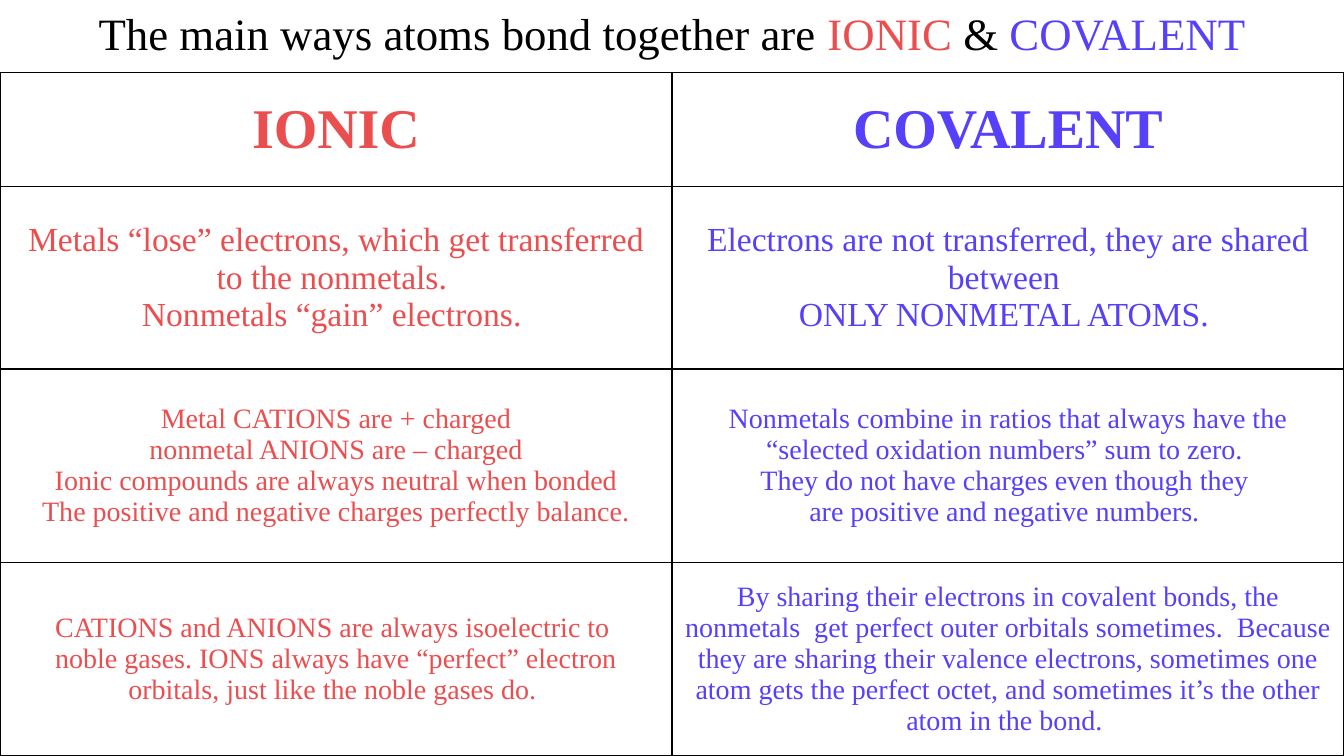
from lxml.etree import SubElement
from pptx import Presentation
from pptx.dml.color import RGBColor
from pptx.enum.text import MSO_ANCHOR, MSO_AUTO_SIZE, PP_ALIGN
from pptx.oxml.ns import qn
from pptx.util import Inches, Pt

BLACK, RED, VIOLET = "000000", "EB4E4F", "5640FA"
SLIDE_WIDTH, SLIDE_HEIGHT = 13.33, 7.5
TABLE_TOP = 0.72

TITLE = [
    ("The main ways atoms bond together are ", BLACK),
    ("IONIC", RED),
    (" & ", BLACK),
    ("COVALENT", VIOLET),
]
COLUMN_COLORS = [RED, VIOLET]

# Row height, text format, ionic text, covalent text
# (\n starts a paragraph, \v breaks a line)
ROWS = [
    (1.13, {"size": Pt(40), "bold": True}, "IONIC", "COVALENT"),
    (1.81, {"size": Pt(24), "bold": False},
     "Metals “lose” electrons, which get transferred\vto the nonmetals. \n"
     "Nonmetals “gain” electrons. ",
     "Electrons are not transferred, they are shared between \v"
     "ONLY NONMETAL ATOMS. "),
    (1.92, {"size": Pt(20), "bold": False},
     "Metal CATIONS are + charged\n"
     "nonmetal ANIONS are – charged\v"
     "Ionic compounds are always neutral when bonded\v"
     "The positive and negative charges perfectly balance.",
     "Nonmetals combine in ratios that always have the "
     "“selected oxidation numbers” sum to zero. \v"
     "They do not have charges even though they \v"
     "are positive and negative numbers. "),
    (1.92, {"size": Pt(20), "bold": False},
     "CATIONS and ANIONS are always isoelectric to \v"
     "noble gases. IONS always have “perfect” electron orbitals, "
     "just like the noble gases do. ",
     "By sharing their electrons in covalent bonds, the nonmetals  get "
     "perfect outer orbitals sometimes.  Because they are sharing their "
     "valence electrons, sometimes one atom gets the perfect octet, and "
     "sometimes it’s the other atom in the bond. "),
]


def color(hex_string):
    return RGBColor.from_string(hex_string)


class SlideBuilder:
    """Holds the text style and the current slide."""

    def __init__(self, page, font_name):
        self.page = page
        self.font_name = font_name

    def format_span(self, span, hex_string, values):
        for name, value in {"name": self.font_name, **values}.items():
            setattr(span.font, name, value)
        span.font.color.rgb = color(hex_string)

    def title(self, left, top, width, height, pieces, values):
        box = self.page.shapes.title
        place = {"left": left, "top": top, "width": width, "height": height}
        for name, value in place.items():
            setattr(box, name, Inches(value))
        frame = box.text_frame
        frame.word_wrap = True
        frame.auto_size = MSO_AUTO_SIZE.NONE
        frame.vertical_anchor = MSO_ANCHOR.MIDDLE
        para = frame.paragraphs[0]
        para.alignment = PP_ALIGN.CENTER
        for text, hex_string in pieces:
            span = para.add_run()
            span.text = text
            self.format_span(span, hex_string, values)

    def borders(self, cell, hex_string, width):
        properties = cell._tc.get_or_add_tcPr()
        for side in ("a:lnL", "a:lnR", "a:lnT", "a:lnB"):
            line = SubElement(properties, qn(side), w=str(Pt(width)))
            fill = SubElement(line, qn("a:solidFill"))
            SubElement(fill, qn("a:srgbClr"), val=hex_string)

    def cell(self, cell, text, hex_string, values):
        self.borders(cell, BLACK, 1)
        cell.fill.background()
        cell.vertical_anchor = MSO_ANCHOR.MIDDLE
        cell.text_frame.text = text
        for para in cell.text_frame.paragraphs:
            para.alignment = PP_ALIGN.CENTER
            for span in para.runs:
                self.format_span(span, hex_string, values)

    def table(self, left, top, width, rows, column_colors):
        total = sum(row[0] for row in rows)
        table = self.page.shapes.add_table(
            len(rows), len(column_colors), Inches(left), Inches(top),
            Inches(width), Inches(total)).table
        table.first_row = table.horz_banding = False
        for column in table.columns:
            column.width = Inches(width / len(column_colors))
        for row, (height, values, *texts) in zip(table.rows, rows):
            row.height = Inches(height)
            for cell, text, hex_string in zip(row.cells, texts, column_colors):
                self.cell(cell, text, hex_string, values)


def main():
    deck = Presentation()
    deck.slide_width = Inches(SLIDE_WIDTH)
    deck.slide_height = Inches(SLIDE_HEIGHT)
    page = deck.slides.add_slide(deck.slide_layouts[5])
    builder = SlideBuilder(page, "Times New Roman")

    # Heading
    builder.title(0, 0, SLIDE_WIDTH, 0.64, TITLE, {"size": Pt(32)})

    # Comparison of the two bond types
    builder.table(0, TABLE_TOP, SLIDE_WIDTH, ROWS, COLUMN_COLORS)

    deck.save("out.pptx")


if __name__ == "__main__":
    main()
